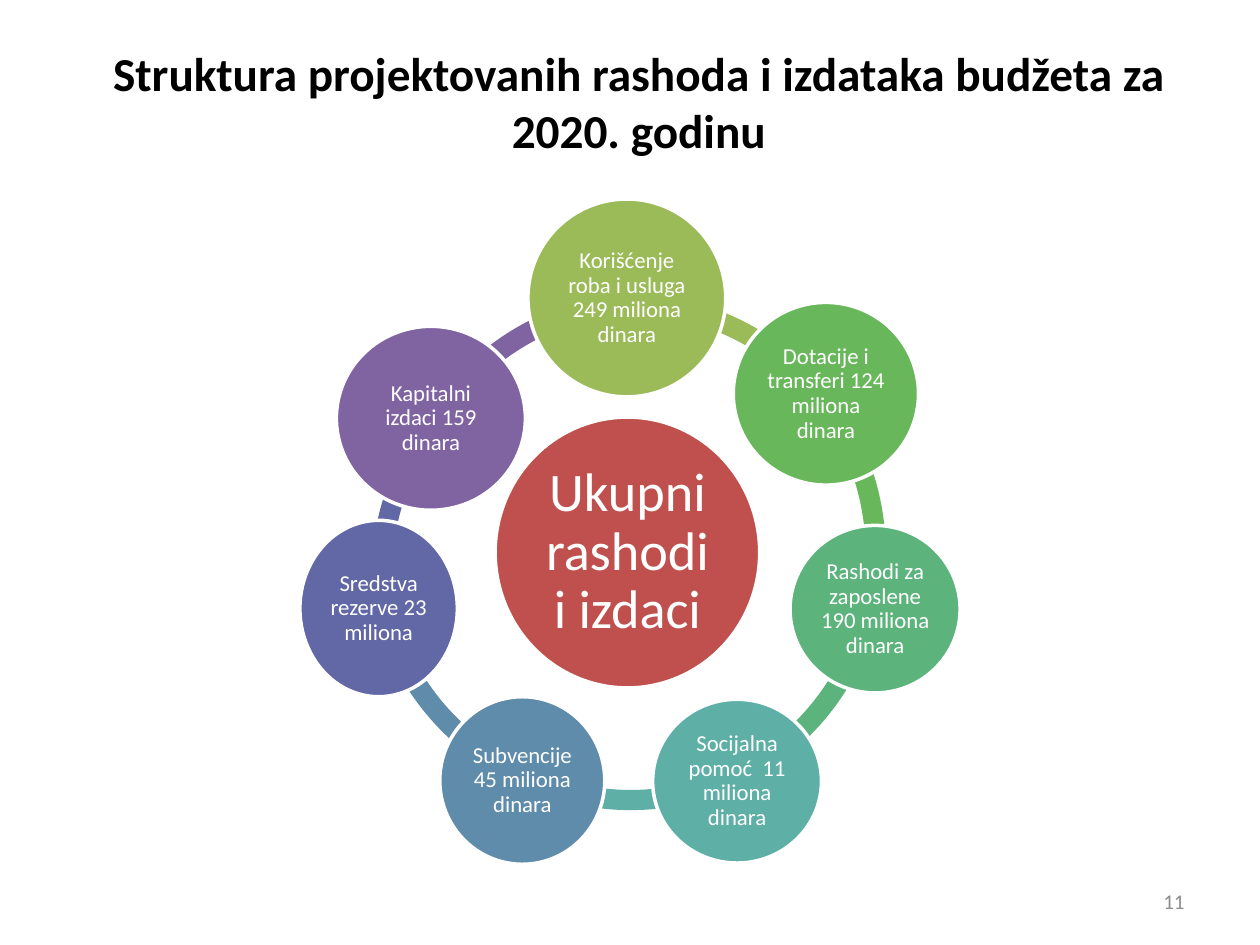
from dataclasses import dataclass

import pptx
import pptx.dml.color
import pptx.enum.shapes
import pptx.enum.text
import pptx.util
from pptx.util import Inches

SHAPES = pptx.enum.shapes.MSO_SHAPE
ALIGN = pptx.enum.text.PP_ALIGN
MIDDLE = pptx.enum.text.MSO_ANCHOR.MIDDLE
FONT = "Calibri"
RING_SIZE = 4.11
RING_THICKNESS = 0.039
ADJUSTMENT_PER_DEGREE = 0.6


@dataclass
class Circle:
    text: str
    left: float
    top: float
    width: float
    height: float
    fill: str
    size: int = 13
    inset: float = 0.02


@dataclass
class Arc:
    left: float
    top: float
    start: float
    end: float


@dataclass
class Expense:
    circle: Circle
    arc: Arc


TOTAL = Circle("Ukupni rashodi i izdaci", 3.93, 3.31, 2.1, 2.15, "C0504D", 31, 0.04)

EXPENSES = [
    Expense(Circle("Korišćenje roba i usluga 249 miliona dinara", 4.19, 1.58, 1.57, 1.57, "9BBB59"),
            Arc(2.92, 2.33, 270, 321.43)),
    Expense(Circle("Dotacije i transferi 124 miliona dinara", 5.82, 2.4, 1.47, 1.45, "69B75B"),
            Arc(2.92, 2.33, 321.43, 12.86)),
    Expense(Circle("Rashodi za zaposlene 190 miliona dinara", 6.27, 4.17, 1.35, 1.33, "5CB37C"),
            Arc(2.92, 2.33, 12.86, 64.29)),
    Expense(Circle("Socijalna pomoć  11 miliona dinara", 5.18, 5.55, 1.34, 1.3, "5EAFA6"),
            Arc(2.95, 2.32, 65.13, 115.26)),
    Expense(Circle("Subvencije 45 miliona dinara", 3.49, 5.53, 1.31, 1.33, "608CAB"),
            Arc(2.91, 2.3, 114.22, 166.33)),
    Expense(Circle("Sredstva rezerve 23 miliona", 2.38, 4.13, 1.25, 1.4, "6267A6"),
            Arc(2.95, 2.51, 172.37, 218.16)),
    Expense(Circle("Kapitalni izdaci 159 dinara", 2.67, 2.59, 1.5, 1.46, "8064A2"),
            Arc(3.08, 2.32, 211.65, 265.35)),
]


def color(value: str) -> pptx.dml.color.RGBColor:
    return pptx.dml.color.RGBColor.from_string(value)


def apply(target, formats: dict) -> None:
    for name, value in formats.items():
        setattr(target, name, value)


def write(shape, text: str, size: int, fill: str, paragraph: dict,
          bold: bool = False, inset: float | None = None) -> None:
    frame = shape.text_frame
    apply(frame, {"word_wrap": True, "vertical_anchor": MIDDLE})
    if inset is not None:
        sides = ("left", "top", "right", "bottom")
        apply(frame, {f"margin_{side}": Inches(inset) for side in sides})
    para = frame.paragraphs[0]
    apply(para, paragraph)
    span = para.add_run()
    span.text = text
    apply(span.font, {"name": FONT, "size": pptx.util.Pt(size), "bold": bold})
    span.font.color.rgb = color(fill)


def add_filled(page, kind, left: float, top: float, width: float, height: float, fill: str):
    shape = page.shapes.add_shape(kind, Inches(left), Inches(top), Inches(width), Inches(height))
    shape.shadow.inherit = False
    shape.fill.solid()
    shape.fill.fore_color.rgb = color(fill)
    return shape


def draw_arc(page, arc: Arc, fill: str) -> None:
    shape = add_filled(page, SHAPES.BLOCK_ARC, arc.left, arc.top, RING_SIZE, RING_SIZE, fill)
    shape.line.fill.background()
    shape.adjustments[0] = arc.start * ADJUSTMENT_PER_DEGREE
    shape.adjustments[1] = arc.end * ADJUSTMENT_PER_DEGREE
    shape.adjustments[2] = RING_THICKNESS


def draw_circle(page, circle: Circle) -> None:
    shape = add_filled(page, SHAPES.OVAL, circle.left, circle.top,
                       circle.width, circle.height, circle.fill)
    shape.line.color.rgb = color("FFFFFF")
    shape.line.width = pptx.util.Pt(2)
    write(shape, circle.text, circle.size, "FFFFFF",
          {"alignment": ALIGN.CENTER, "line_spacing": 0.9}, inset=circle.inset)


def main() -> None:
    deck = pptx.Presentation()
    apply(deck, {"slide_width": Inches(10), "slide_height": Inches(7.5)})
    page = deck.slides.add_slide(deck.slide_layouts[5])

    title = page.shapes.title
    apply(title, {"left": Inches(0.57), "top": Inches(0.34),
                  "width": Inches(9), "height": Inches(0.93)})
    write(title, "Struktura projektovanih rashoda i izdataka budžeta za 2020. godinu",
          27, "000000", {"alignment": ALIGN.CENTER}, bold=True)

    for expense in reversed(EXPENSES):
        draw_arc(page, expense.arc, expense.circle.fill)
    for circle in [TOTAL] + [expense.circle for expense in EXPENSES]:
        draw_circle(page, circle)

    number = page.shapes.add_textbox(Inches(7.17), Inches(6.95), Inches(2.33), Inches(0.4))
    write(number, "11", 12, "8C8C8C", {"alignment": ALIGN.RIGHT})

    deck.save("out.pptx")


if __name__ == "__main__":
    main()
